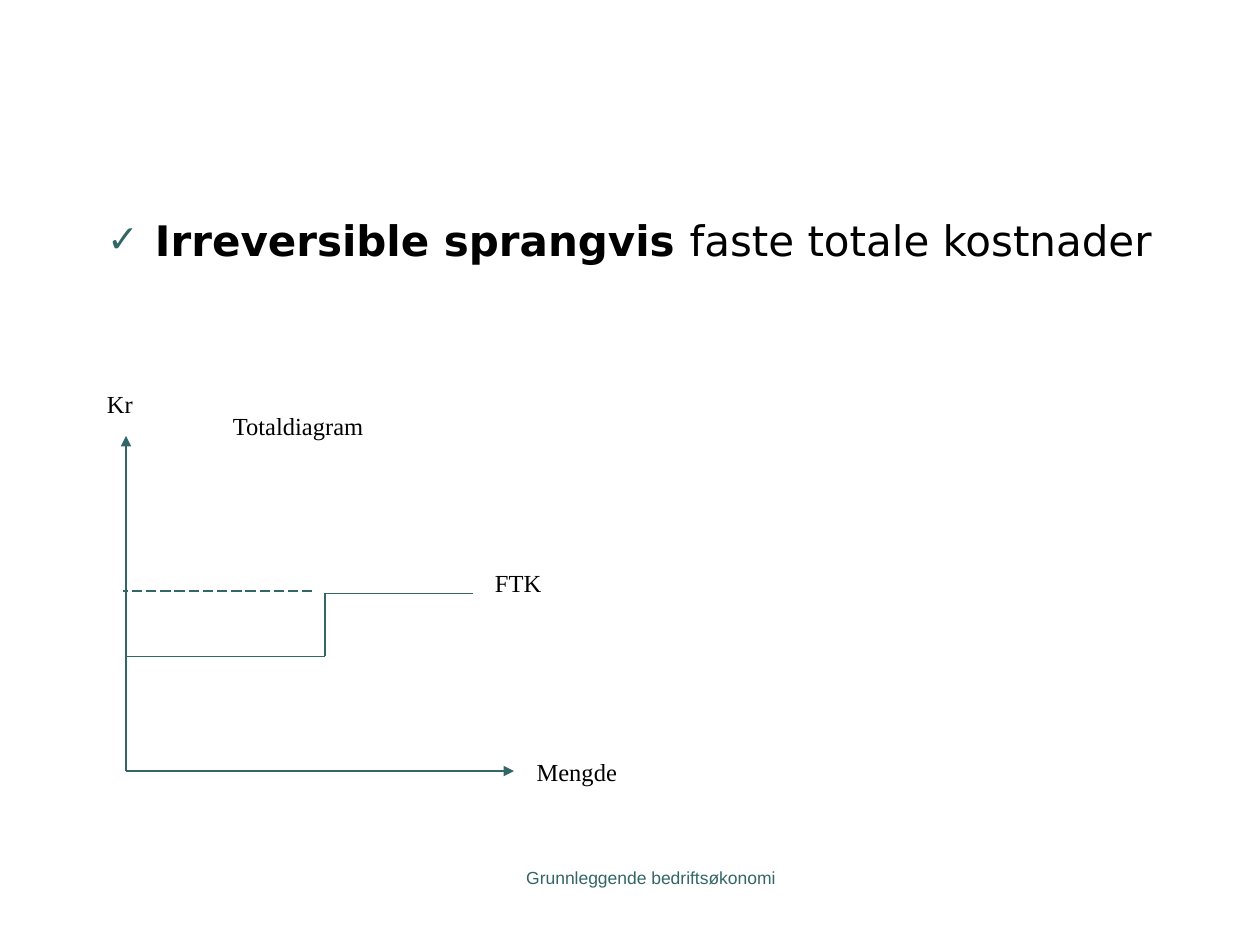
import pptx
import pptx.util
import pptx.dml.color
import pptx.enum.dml
import pptx.enum.shapes
import pptx.enum.text
import pptx.oxml
import pptx.oxml.ns

Inches = pptx.util.Inches
Pt = pptx.util.Pt
HUES = {"teal": "336666", "ink": "000000"}
FORMS = {
    "body": {"name": "DejaVu Sans", "size": Pt(24), "hue": "ink"},
    "label": {"name": "Times New Roman", "size": Pt(14), "hue": "ink"},
    "foot": {"name": "Arial", "size": Pt(10), "hue": "teal"},
}


def color(hue):
    """Return the RGB colour of a named hue."""
    return pptx.dml.color.RGBColor.from_string(HUES[hue])


def append(parent, tag, **attrs):
    """Append an empty drawing element to a parent."""
    child = pptx.oxml.parse_xml(f"<a:{tag} {pptx.oxml.ns.nsdecls('a')}/>")
    for key, value in attrs.items():
        child.set(key, value)
    parent.append(child)
    return child


class Painter:
    """Hold the style and the current slide."""

    def __init__(self, slide, forms):
        """Keep the slide and start the diagram group."""
        self.slide = slide
        self.forms = forms
        self.graph = slide.shapes.add_group_shape()

    def style(self, font, form, **extra):
        """Apply a named text format to a font."""
        values = {**self.forms[form], **extra}
        font.color.rgb = color(values.pop("hue"))
        for key, value in values.items():
            setattr(font, key, value)

    def text(self, shapes, words, box, form, align=pptx.enum.text.PP_ALIGN.LEFT):
        """Add a text box with one paragraph."""
        frame = shapes.add_textbox(*map(Inches, box)).text_frame
        frame.word_wrap = True
        para = frame.paragraphs[0]
        para.text = words
        para.alignment = align
        self.style(para.runs[0].font, form)

    def label(self, words, left, top, width):
        """Add a diagram label."""
        self.text(self.graph.shapes, words, (left, top, width, 0.33), "label")

    def line(self, start, end, arrow=False, dash=None):
        """Add a straight diagram line."""
        kind = pptx.enum.shapes.MSO_CONNECTOR.STRAIGHT
        link = self.graph.shapes.add_connector(kind, *map(Inches, (*start, *end)))
        link.line.color.rgb = color("teal")
        link.line.width = Pt(0.75)
        if dash:
            link.line.dash_style = dash
        props = link._element.spPr
        if arrow:
            append(link.line._get_or_add_ln(), "tailEnd", type="triangle")
        append(props, "effectLst")

    def bullet(self, parts, box):
        """Fill the body placeholder with one ticked paragraph."""
        body = self.slide.placeholders[1]
        for key, value in zip(("left", "top", "width", "height"), box):
            setattr(body, key, Inches(value))
        para = body.text_frame.paragraphs[0]
        para.space_before = Pt(0)
        props = para._p.get_or_add_pPr()
        indent = Inches(0.38)
        props.set("marL", str(indent))
        props.set("indent", str(-indent))
        append(append(props, "buClr"), "srgbClr", val=HUES["teal"])
        append(props, "buSzPct", val="90000")
        append(props, "buFont", typeface="DejaVu Sans")
        append(props, "buChar", char="✓")
        for words, bold in parts:
            run = para.add_run()
            run.text = words
            self.style(run.font, "body", bold=bold)


def main():
    """Build and save the slide."""
    deck = pptx.Presentation()
    deck.slide_width, deck.slide_height = Inches(10), Inches(7.5)
    slide = deck.slides.add_slide(deck.slide_layouts[1])
    title = slide.shapes.title._element
    title.getparent().remove(title)
    paint = Painter(slide, FORMS)

    paint.bullet(
        [("Irreversible sprangvis ", True), ("faste totale kostnader", False)],
        (0.75, 1.65, 8.5, 4.83),
    )

    zero = (1, 6.12)
    for end in ((1, 3.46), (4.08, 6.12)):
        paint.line(zero, end, arrow=True)
    steps = [(1, 5.21), (2.58, 5.21), (2.58, 4.71), (3.75, 4.71)]
    for start, end in zip(steps, steps[1:]):
        paint.line(start, end)
    paint.line((2.48, 4.69), (0.98, 4.69), dash=pptx.enum.dml.MSO_LINE.LONG_DASH)

    for words, left, top, width in (
        ("Kr", 0.75, 3.04, 0.83),
        ("Mengde", 4.16, 5.96, 0.92),
        ("Totaldiagram", 1.75, 3.21, 2.08),
        ("FTK", 3.83, 4.46, 0.83),
    ):
        paint.label(words, left, top, width)

    paint.text(
        slide.shapes,
        "Grunnleggende bedriftsøkonomi",
        (3.58, 6.83, 3.17, 0.5),
        "foot",
        pptx.enum.text.PP_ALIGN.CENTER,
    )
    deck.save("out.pptx")


if __name__ == "__main__":
    main()
